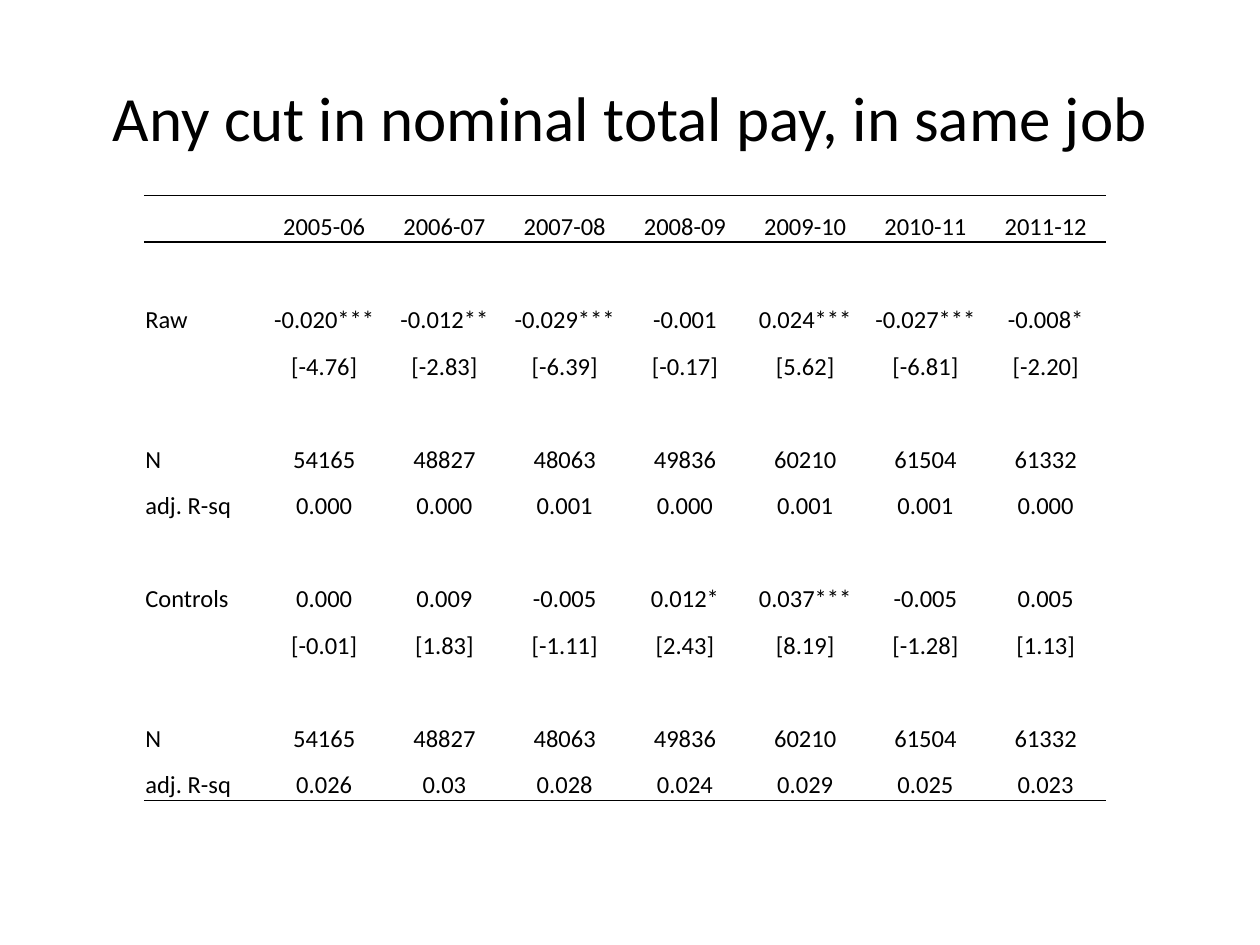
from lxml import etree
from pptx import Presentation
from pptx import util as u
from pptx.dml.color import RGBColor
from pptx.enum import text
from pptx.oxml import ns

COLOURS = {"ink": "000000"}
FONT = "Calibri"
YEARS = ["2005-06", "2006-07", "2007-08", "2008-09", "2009-10", "2010-11", "2011-12"]
SAMPLE = ["N", "54165", "48827", "48063", "49836", "60210", "61504", "61332"]
ROWS = [
    [""] + YEARS,
    [],
    ["Raw", "-0.020***", "-0.012**", "-0.029***", "-0.001", "0.024***", "-0.027***", "-0.008*"],
    ["", "[-4.76]", "[-2.83]", "[-6.39]", "[-0.17]", "[5.62]", "[-6.81]", "[-2.20]"],
    [],
    SAMPLE,
    ["adj. R-sq", "0.000", "0.000", "0.001", "0.000", "0.001", "0.001", "0.000"],
    [],
    ["Controls", "0.000", "0.009", "-0.005", "0.012*", "0.037***", "-0.005", "0.005"],
    ["", "[-0.01]", "[1.83]", "[-1.11]", "[2.43]", "[8.19]", "[-1.28]", "[1.13]"],
    [],
    SAMPLE,
    ["adj. R-sq", "0.026", "0.03", "0.028", "0.024", "0.029", "0.025", "0.023"],
]


def style_text(tf, size, align):
    """Format every run of a text frame and align its paragraphs."""
    for p in tf.paragraphs:
        p.alignment = align
        for r in p.runs:
            r.font.name = FONT
            r.font.size = u.Pt(size)
            r.font.color.rgb = RGBColor.from_string(COLOURS["ink"])


def set_borders(cell, ruled):
    """Rule the named sides of a cell and clear the others."""
    tc_pr = cell._tc.get_or_add_tcPr()
    for side in "LRTB":
        ln = etree.SubElement(tc_pr, ns.qn(f"a:ln{side}"), w=str(u.Pt(1)))
        if side in ruled:
            fill = etree.SubElement(ln, ns.qn("a:solidFill"))
            etree.SubElement(fill, ns.qn("a:srgbClr"), val=COLOURS["ink"])
        else:
            etree.SubElement(ln, ns.qn("a:noFill"))


def add_title(s, left, top, width, height):
    """Place the centred slide title in the given box."""
    tf = s.shapes.add_textbox(left, top, width, height).text_frame
    tf.word_wrap = True
    tf.vertical_anchor = text.MSO_ANCHOR.MIDDLE
    tf.text = "Any cut in nominal total pay, in same job"
    style_text(tf, 36, text.PP_ALIGN.CENTER)


def add_results(s, left, top, width, height):
    """Place the regression table in the given box."""
    table = s.shapes.add_table(len(ROWS), len(YEARS) + 1, left, top, width, height).table
    table.first_row = table.horz_banding = False
    rules = {0: "TB", 1: "T", len(ROWS) - 2: "", len(ROWS) - 1: "B"}
    for i, (row, values) in enumerate(zip(table.rows, ROWS)):
        for j, cell in enumerate(row.cells):
            cell.margin_left = cell.margin_right = cell.margin_top = u.Cm(0.03)
            cell.margin_bottom = 0
            cell.vertical_anchor = text.MSO_ANCHOR.BOTTOM
            set_borders(cell, rules.get(i, ""))
            cell.fill.background()
            if values and values[j]:
                cell.text_frame.text = values[j]
                style_text(cell.text_frame, 14, text.PP_ALIGN.CENTER if j else text.PP_ALIGN.LEFT)


def main():
    """Build and save the slide."""
    prs = Presentation()
    prs.slide_width, prs.slide_height = u.Cm(25.4), u.Cm(19.05)
    s = prs.slides.add_slide(prs.slide_layouts[6])
    add_title(s, u.Cm(1.27), u.Cm(0.76), u.Cm(22.86), u.Cm(3.18))
    add_results(s, u.Cm(2.9), u.Cm(3.94), u.Cm(19.4), u.Cm(12.2))
    prs.save("out.pptx")


if __name__ == "__main__":
    main()
